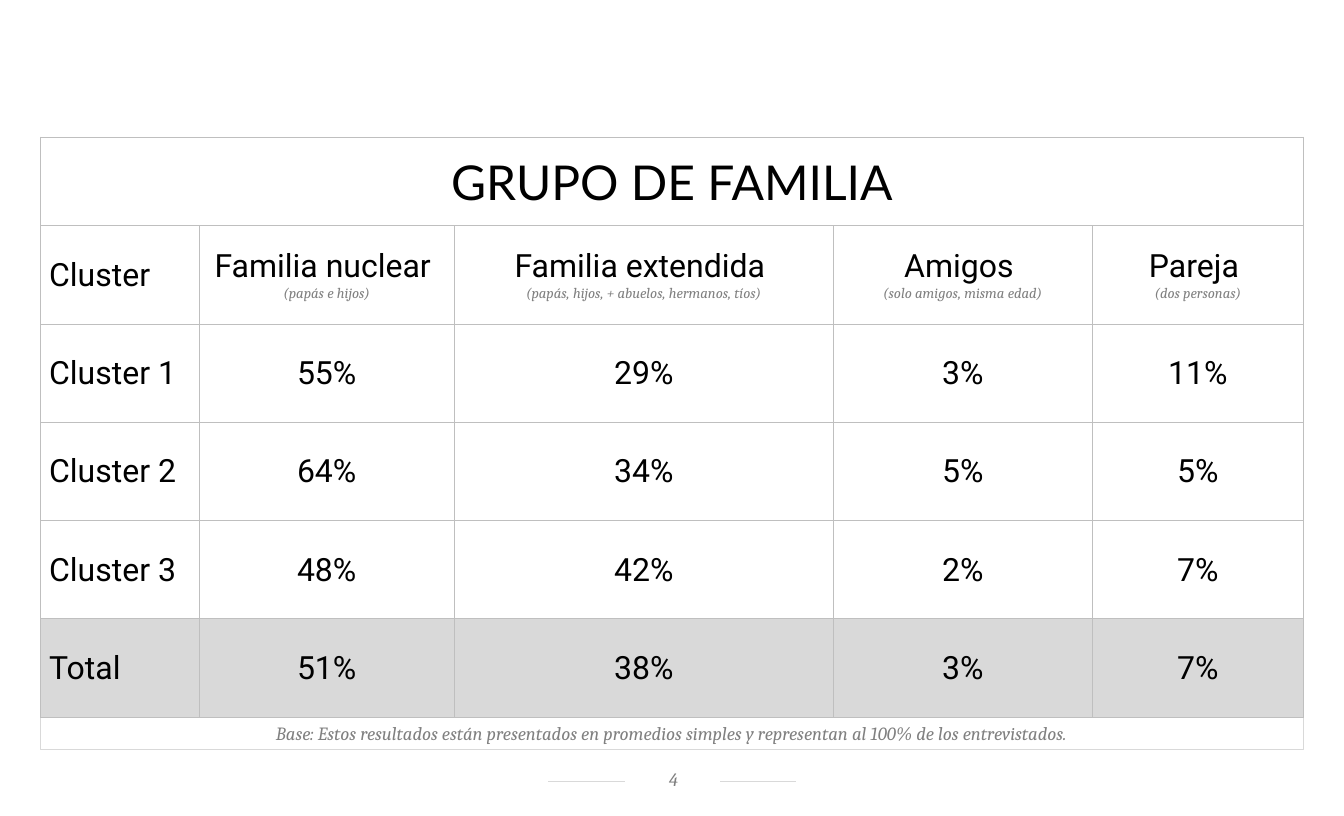
from dataclasses import dataclass

from lxml.etree import SubElement
from pptx import Presentation
from pptx.dml.color import RGBColor
from pptx.enum.shapes import MSO_CONNECTOR, MSO_SHAPE
from pptx.enum.text import MSO_ANCHOR, PP_ALIGN
from pptx.oxml import parse_xml
from pptx.oxml.ns import nsdecls, qn
from pptx.slide import Slide
from pptx.table import _Cell
from pptx.text.text import TextFrame
from pptx.util import Cm, Pt

BLACK = RGBColor(0x00, 0x00, 0x00)
WHITE = RGBColor(0xFF, 0xFF, 0xFF)
GRAY = RGBColor(0x80, 0x80, 0x80)
LIGHT_GRAY = RGBColor(0xD9, 0xD9, 0xD9)
BORDER_GRAY = RGBColor(0xBF, 0xBF, 0xBF)

TABLE_LEFT, TABLE_TOP = 1.07, 3.63
COLUMN_WIDTHS = [4.2, 6.75, 10.03, 6.85, 5.59]
TITLE_HEIGHT, ROW_HEIGHT = 2.34, 2.6
TABLE_WIDTH = sum(COLUMN_WIDTHS)


@dataclass(frozen=True)
class Group:
    name: str
    detail: str


@dataclass(frozen=True)
class ClusterRow:
    label: str
    percentages: tuple[int, ...]
    fill: RGBColor | None = None


@dataclass(frozen=True)
class Note:
    text: str
    left: float
    top: float
    width: float
    height: float
    anchor: MSO_ANCHOR
    margins: tuple[float, float, float, float]
    line: RGBColor | None = None


GROUPS = [
    Group("Familia nuclear ", "(papás e hijos)"),
    Group("Familia extendida ", "(papás, hijos, + abuelos, hermanos, tíos)"),
    Group("Amigos ", "(solo amigos, misma edad)"),
    Group("Pareja ", "(dos personas)"),
]
CLUSTERS = [
    ClusterRow("Cluster 1", (55, 29, 3, 11)),
    ClusterRow("Cluster 2", (64, 34, 5, 5)),
    ClusterRow("Cluster 3", (48, 42, 2, 7)),
    ClusterRow("Total", (51, 38, 3, 7), LIGHT_GRAY),
]
PAGE_NUMBER = Note("4", 16.54, 20.27, 2.51, 0.74, MSO_ANCHOR.MIDDLE,
                   (0.3, 0.05, 0.25, 0.13))
BASE_NOTE = Note(
    "Base: Estos resultados están presentados en promedios simples "
    "y representan al 100% de los entrevistados.",
    TABLE_LEFT, 18.97, TABLE_WIDTH, 0.86, MSO_ANCHOR.BOTTOM,
    (0.25, 0.13, 0.25, 0.13), LIGHT_GRAY)


def write(frame: TextFrame, text: str, *, size: float = 24, font: str = "Roboto",
          color: RGBColor = BLACK, italic: bool = False,
          align: PP_ALIGN = PP_ALIGN.CENTER, indent: float = 0) -> None:
    """Fill the first paragraph, or add one when the frame already has text."""
    paragraph = frame.add_paragraph() if frame.text else frame.paragraphs[0]
    paragraph.alignment = align
    if indent:
        paragraph._p.get_or_add_pPr().set("marL", str(Cm(indent)))
    run = paragraph.add_run()
    run.text = text
    run.font.size = Pt(size)
    run.font.name = font
    run.font.italic = italic
    run.font.color.rgb = color


def write_small(frame: TextFrame, text: str, size: float) -> None:
    write(frame, text, size=size, font="Cambria", color=GRAY, italic=True)


def write_label(cell: _Cell, text: str) -> None:
    write(cell.text_frame, text, align=PP_ALIGN.LEFT, indent=0.2)


def format_cell(cell: _Cell, fill: RGBColor | None = None) -> None:
    cell.vertical_anchor = MSO_ANCHOR.MIDDLE
    cell.margin_left = cell.margin_top = cell.margin_right = Cm(0.03)
    cell.margin_bottom = 0
    if fill is None:
        cell.fill.background()
    else:
        cell.fill.solid()
        cell.fill.fore_color.rgb = fill
    properties = cell._tc.get_or_add_tcPr()
    for position, side in enumerate("LRTB"):
        properties.insert(position, parse_xml(
            f'<a:ln{side} {nsdecls("a")} w="{Pt(0.5)}"><a:solidFill>'
            f'<a:srgbClr val="{BORDER_GRAY}"/></a:solidFill></a:ln{side}>'))


def add_cluster_table(slide: Slide) -> None:
    row_count = len(CLUSTERS) + 2
    height = TITLE_HEIGHT + ROW_HEIGHT * (row_count - 1)
    table = slide.shapes.add_table(
        row_count, len(COLUMN_WIDTHS), Cm(TABLE_LEFT), Cm(TABLE_TOP),
        Cm(TABLE_WIDTH), Cm(height)).table
    table.first_row = table.horz_banding = False
    for column, width in zip(table.columns, COLUMN_WIDTHS):
        column.width = Cm(width)
    fills = [None, None] + [cluster.fill for cluster in CLUSTERS]
    for index, (row, fill) in enumerate(zip(table.rows, fills)):
        row.height = Cm(ROW_HEIGHT if index else TITLE_HEIGHT)
        for cell in row.cells:
            format_cell(cell, fill)

    title = table.cell(0, 0)
    title.merge(table.cell(0, len(COLUMN_WIDTHS) - 1))
    write(title.text_frame, "GRUPO DE FAMILIA", size=36, font="Lato")
    write_label(table.cell(1, 0), "Cluster")
    for column_index, group in enumerate(GROUPS, start=1):
        frame = table.cell(1, column_index).text_frame
        write(frame, group.name)
        write_small(frame, group.detail, 11)
    for row_index, cluster in enumerate(CLUSTERS, start=2):
        write_label(table.cell(row_index, 0), cluster.label)
        for column_index, percentage in enumerate(cluster.percentages, start=1):
            write(table.cell(row_index, column_index).text_frame, f"{percentage}%")


def add_note(slide: Slide, note: Note) -> None:
    shape = slide.shapes.add_shape(
        MSO_SHAPE.RECTANGLE, Cm(note.left), Cm(note.top), Cm(note.width), Cm(note.height))
    shape.shadow.inherit = False
    shape.fill.solid()
    shape.fill.fore_color.rgb = WHITE
    if note.line is None:
        shape.line.fill.background()
    else:
        shape.line.color.rgb = note.line
        shape.line.width = Pt(0.75)
    frame = shape.text_frame
    frame.word_wrap = True
    frame.vertical_anchor = note.anchor
    (frame.margin_left, frame.margin_top,
     frame.margin_right, frame.margin_bottom) = map(Cm, note.margins)
    write_small(frame, note.text, 14)


def add_footer_line(slide: Slide) -> None:
    line = slide.shapes.add_connector(
        MSO_CONNECTOR.STRAIGHT, Cm(14.5), Cm(20.68), Cm(21.06), Cm(20.68))
    line.line.color.rgb = LIGHT_GRAY
    line.line.width = Pt(0.5)
    SubElement(line._element.spPr, qn("a:effectLst"))


def main() -> None:
    presentation = Presentation()
    presentation.slide_width = Cm(35.56)
    presentation.slide_height = Cm(21.59)
    slide = presentation.slides.add_slide(presentation.slide_layouts[6])
    add_footer_line(slide)
    add_note(slide, PAGE_NUMBER)
    add_note(slide, BASE_NOTE)
    add_cluster_table(slide)
    presentation.save("out.pptx")


if __name__ == "__main__":
    main()
